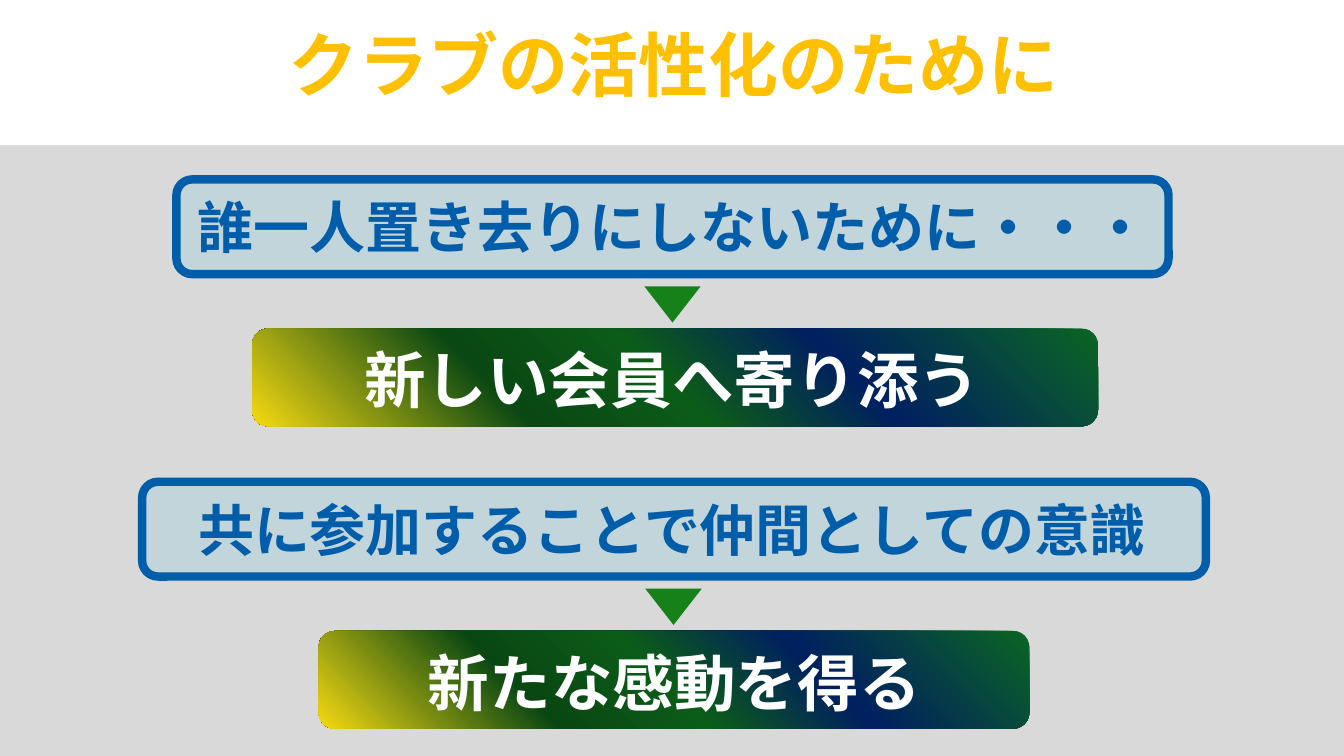
from dataclasses import dataclass
from lxml import etree
from pptx import Presentation
from pptx.dml.color import RGBColor as RGB
from pptx.enum.shapes import MSO_SHAPE as Kind
from pptx.enum.text import MSO_ANCHOR as Anchor, MSO_AUTO_SIZE as Auto, PP_ALIGN as Align
from pptx.oxml import parse_xml
from pptx.oxml.ns import nsdecls, qn
from pptx.util import Inches, Pt


@dataclass(frozen=True)
class Theme:
    font: str = "Noto Sans CJK JP"
    back: str = "D9D9D9"
    white: str = "FFFFFF"
    gold: str = "FFC000"
    blue: str = "005DAA"
    sky: str = "01B4E7"
    green: str = "158118"
    blend: tuple = ((1, "EFD511"), (30, "094713"), (49, "0C5C19"),
                    (69, "002060"), (100, "0B6523"))
    head: int = 50
    cause: int = 40
    goal: int = 44


class Deck:
    """Holds the theme and the current slide and draws each kind of element."""

    def __init__(self, theme):
        self.theme = theme
        self.file = Presentation()
        self.file.slide_width, self.file.slide_height = Inches(13.33), Inches(7.5)
        self.slide = self.file.slides.add_slide(self.file.slide_layouts[5])
        fill = self.slide.background.fill
        fill.solid()
        fill.fore_color.rgb = RGB.from_string(theme.back)

    def shape(self, kind, box, color):
        item = self.slide.shapes.add_shape(kind, *map(Inches, box))
        item.shadow.inherit = False
        item.fill.solid()
        item.fill.fore_color.rgb = RGB.from_string(color)
        item.line.fill.background()
        return item

    def band(self, box):
        item = self.shape(Kind.RECTANGLE, box, self.theme.white)
        self.slide.shapes.title.element.addprevious(item.element)

    def panel(self, box):
        item = self.shape(Kind.ROUNDED_RECTANGLE, box, self.theme.sky)
        tint = item.element.spPr.find(qn("a:solidFill"))[0]
        etree.SubElement(tint, qn("a:alpha")).set("val", "10000")
        item.line.color.rgb = RGB.from_string(self.theme.blue)
        item.line.width = Pt(6)

    def arrow(self, box):
        item = self.shape(Kind.ISOSCELES_TRIANGLE, box, self.theme.green)
        item.rotation = 180

    def bar(self, box):
        item = self.shape(Kind.ROUNDED_RECTANGLE, box, self.theme.white)
        stops = "".join(f'<a:gs pos="{pos * 1000}"><a:srgbClr val="{color}"/></a:gs>'
                        for pos, color in self.theme.blend)
        grad = parse_xml(
            f'<a:gradFill {nsdecls("a")} rotWithShape="1"><a:gsLst>{stops}</a:gsLst>'
            '<a:path path="circle"><a:fillToRect t="100000" r="100000"/></a:path>'
            '</a:gradFill>')
        props = item.element.spPr
        props.replace(props.find(qn("a:solidFill")), grad)

    def put(self, item, box, text, size, color):
        item.left, item.top, item.width, item.height = map(Inches, box)
        frame = item.text_frame
        para = frame.paragraphs[0]
        run = para.add_run()
        run.text = text
        looks = (
            (frame, {"word_wrap": True, "auto_size": Auto.NONE,
                     "vertical_anchor": Anchor.MIDDLE}),
            (para, {"alignment": Align.CENTER}),
            (run.font, {"name": self.theme.font, "size": Pt(size), "bold": True}),
            (run.font.color, {"rgb": RGB.from_string(color)}),
        )
        for part, form in looks:
            for name, value in form.items():
                setattr(part, name, value)
        latin = next(item.element.iter(qn("a:latin")))
        east = etree.SubElement(latin.getparent(), qn("a:ea"))
        east.set("typeface", self.theme.font)

    def title(self, box, text):
        self.put(self.slide.shapes.title, box, text, self.theme.head, self.theme.gold)

    def label(self, box, text, size, color):
        item = self.slide.shapes.add_textbox(*map(Inches, box))
        self.put(item, box, text, size, color)

    def step(self, top, cause, goal):
        theme = self.theme
        text, left, width, edge, span = cause
        self.panel((left, top, width, 0.94))
        self.label((edge, top + 0.08, span, 0.77), text, theme.cause, theme.blue)
        text, left, width, edge, span, mark = goal
        self.arrow((mark, top + 1.06, 0.56, 0.36))
        self.bar((left, top + 1.48, width, 0.97))
        self.label((edge, top + 1.56, span, 0.84), text, theme.goal, theme.white)


def main():
    deck = Deck(Theme())
    deck.band((0, 0, 13.33, 1.44))
    deck.title((2.21, 0.16, 8.94, 0.94), "クラブの活性化のために")
    deck.step(1.78, ("誰一人置き去りにしないために・・・", 1.75, 9.84, 1.44, 10.47),
              ("新しい会員へ寄り添う", 2.5, 8.39, 2.01, 9.32, 6.39))
    deck.step(4.78, ("共に参加することで仲間としての意識", 1.41, 10.55, 0.94, 11.45),
              ("新たな感動を得る", 3.16, 7.05, 2.03, 9.32, 6.4))
    deck.file.save("out.pptx")


if __name__ == "__main__":
    main()
